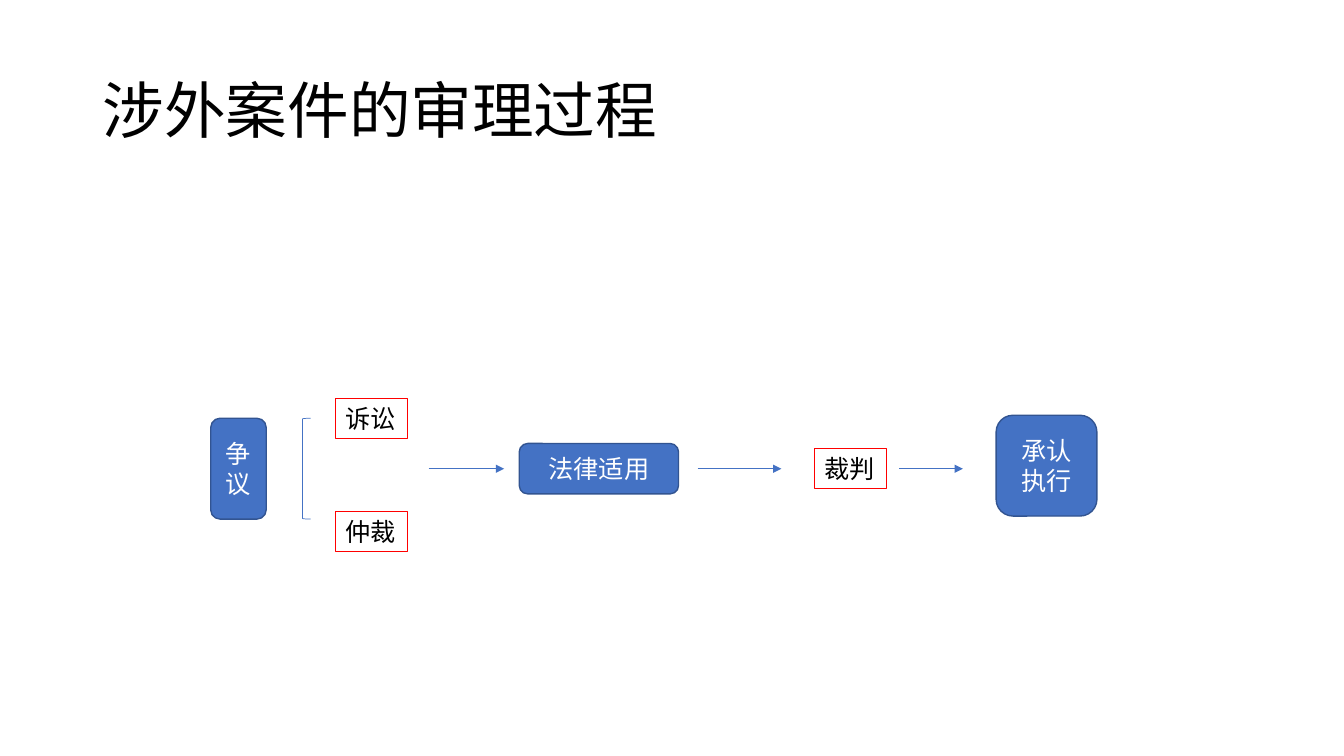
from lxml import etree
from pptx import Presentation
from pptx.dml.color import RGBColor
from pptx.enum.shapes import MSO_CONNECTOR, MSO_SHAPE
from pptx.enum.text import MSO_ANCHOR, MSO_AUTO_SIZE, PP_ALIGN
from pptx.oxml.ns import qn
from pptx.util import Inches, Pt

ROUNDED = MSO_SHAPE.ROUNDED_RECTANGLE
BRACKET = MSO_SHAPE.LEFT_BRACKET
STRAIGHT = MSO_CONNECTOR.STRAIGHT
MIDDLE, TOP = MSO_ANCHOR.MIDDLE, MSO_ANCHOR.TOP
LEFT, CENTER = PP_ALIGN.LEFT, PP_ALIGN.CENTER
GROW = MSO_AUTO_SIZE.SHAPE_TO_FIT_TEXT

BLACK = RGBColor(0, 0, 0)
WHITE = RGBColor(255, 255, 255)
BLUE = RGBColor(0x44, 0x72, 0xC4)
DARK_BLUE = RGBColor(0x32, 0x54, 0x91)
RED = RGBColor(255, 0, 0)
CJK_FONT = "Noto Sans CJK SC"
LATIN_FONT = "Arial"

TITLE = "涉外案件的审理过程"
STAGES = [
    ("争议", 2.09, 4.15, 0.55, 1),
    ("法律适用", 5.15, 4.4, 1.58, 0.5),
    ("承认执行", 9.88, 4.12, 1, 1),
]
OUTCOMES = [("诉讼", 3.33, 3.95), ("仲裁", 3.33, 5.07), ("裁判", 8.08, 4.45)]
OUTCOME_SIZE = (0.71, 0.4)
BRACKET_BOX = (3, 4.15, 0.08, 1)
ARROWS = [(4.25, 5), (6.92, 7.75), (8.92, 9.55)]
ARROW_Y = 4.65

presentation = Presentation()
presentation.slide_width = Inches(13.33)
presentation.slide_height = Inches(7.5)
slide = presentation.slides.add_slide(presentation.slide_layouts[6])


def inches(*lengths):
    return [Inches(length) for length in lengths]


def write_text(shape, text, size=18, color=WHITE, font=CJK_FONT, align=CENTER,
               anchor=MIDDLE, wrap=True, spacing=None):
    frame = shape.text_frame
    frame.word_wrap = wrap
    frame.vertical_anchor = anchor
    paragraph = frame.paragraphs[0]
    paragraph.alignment = align
    if spacing:
        paragraph.line_spacing = spacing
    run = paragraph.add_run()
    run.text = text
    run.font.size = Pt(size)
    run.font.color.rgb = color
    run.font.name = font
    east_asian = etree.SubElement(run.font._element, qn("a:ea"))
    east_asian.set("typeface", CJK_FONT)


def set_line(shape, color, width):
    shape.line.color.rgb = color
    shape.line.width = Pt(width)


def add_stage(text, *box):
    shape = slide.shapes.add_shape(ROUNDED, *inches(*box))
    shape.shadow.inherit = False
    shape.fill.solid()
    shape.fill.fore_color.rgb = BLUE
    set_line(shape, DARK_BLUE, 1)
    write_text(shape, text)


def add_outcome(text, left, top):
    shape = slide.shapes.add_textbox(*inches(left, top, *OUTCOME_SIZE))
    set_line(shape, RED, 0.75)
    write_text(shape, text, color=BLACK, font=LATIN_FONT, align=LEFT,
               anchor=TOP, wrap=False)
    shape.text_frame.auto_size = GROW


def add_arrow(start, end):
    arrow = slide.shapes.add_connector(
        STRAIGHT, *inches(start, ARROW_Y, end, ARROW_Y))
    set_line(arrow, BLUE, 0.5)
    tail = etree.SubElement(arrow.line._get_or_add_ln(), qn("a:tailEnd"))
    tail.set("type", "triangle")
    etree.SubElement(arrow._element.spPr, qn("a:effectLst"))


title = slide.shapes.add_textbox(*inches(0.92, 0.4, 11.5, 1.45))
write_text(title, TITLE, size=44, color=BLACK, align=LEFT, spacing=0.9)

for stage in STAGES:
    add_stage(*stage)

bracket = slide.shapes.add_shape(BRACKET, *inches(*BRACKET_BOX))
bracket.shadow.inherit = False
bracket.fill.background()
set_line(bracket, BLUE, 0.5)

for outcome in OUTCOMES:
    add_outcome(*outcome)
for arrow_span in ARROWS:
    add_arrow(*arrow_span)

presentation.save("out.pptx")
